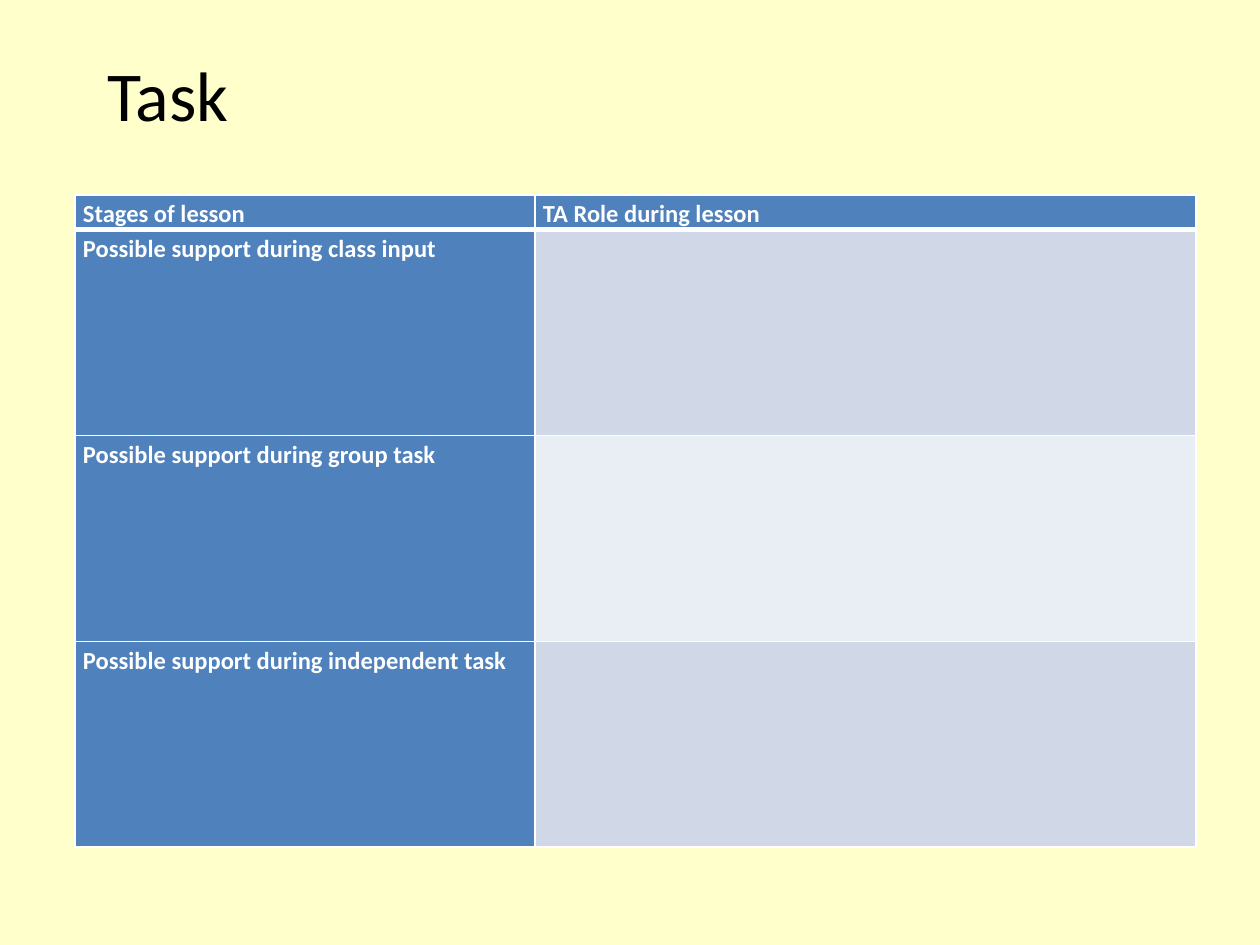
from lxml.etree import SubElement
from pptx import Presentation
from pptx.dml.color import RGBColor
from pptx.oxml.ns import qn
from pptx.util import Emu, Pt

EMU_PER_PX = 914400 / 126
COLORS = {
    "background": "FFFFCC",
    "title": "000000",
    "heading": "4F81BD",
    "heading_text": "FFFFFF",
    "border": "FFFFFF",
    "band_dark": "D0D8E8",
    "band_light": "E9EDF4",
}
HEADINGS = ["Stages of lesson", "TA Role during lesson"]
STAGES = [
    "Possible support during class input",
    "Possible support during group task",
    "Possible support during independent task",
]
COLUMN_WIDTHS = [460, 661]
HEADER_HEIGHT, STAGE_HEIGHT = 34, 206
CELL_MARGINS = {"margin_left": 8, "margin_right": 8, "margin_top": 0, "margin_bottom": 0}


def px(length):
    return Emu(round(length * EMU_PER_PX))


def color(name):
    return RGBColor.from_string(COLORS[name])


class SlideBuilder:
    font_name = "Calibri"

    def __init__(self, slide):
        self.slide = slide

    def background(self, name):
        fill = self.slide.background.fill
        fill.solid()
        fill.fore_color.rgb = color(name)

    def styled_run(self, paragraph, text, color_name, **font_format):
        run = paragraph.add_run()
        run.text = text
        run.font.color.rgb = color(color_name)
        for attribute, value in {"name": self.font_name, **font_format}.items():
            setattr(run.font, attribute, value)

    def title(self, text, left, top, width, height):
        frame = self.slide.shapes.add_textbox(px(left), px(top), px(width), px(height)).text_frame
        frame.word_wrap = True
        self.styled_run(frame.paragraphs[0], text, "title", size=Pt(40))

    def table(self, left, top, column_widths, row_heights):
        table = self.slide.shapes.add_table(
            len(row_heights), len(column_widths), px(left), px(top),
            px(sum(column_widths)), px(sum(row_heights))).table
        for column, width in zip(table.columns, column_widths):
            column.width = px(width)
        for row, height in zip(table.rows, row_heights):
            row.height = px(height)
        return table

    def cell(self, cell, fill_name, text="", **border_widths):
        for attribute, value in CELL_MARGINS.items():
            setattr(cell, attribute, px(value))
        cell.fill.solid()
        cell.fill.fore_color.rgb = color(fill_name)
        self.borders(cell, **border_widths)
        if text:
            paragraph = cell.text_frame.paragraphs[0]
            paragraph.line_spacing = 1.15
            self.styled_run(paragraph, text, "heading_text", size=Pt(14), bold=True)

    def borders(self, cell, top=1, bottom=1):
        properties = cell._tc.get_or_add_tcPr()
        widths = {"a:lnL": 1, "a:lnR": 1, "a:lnT": top, "a:lnB": bottom}
        for position, (tag, width) in enumerate(widths.items()):
            line = SubElement(properties, qn(tag), w=str(Pt(width)))
            solid = SubElement(line, qn("a:solidFill"))
            SubElement(solid, qn("a:srgbClr"), val=COLORS["border"])
            properties.insert(position, line)  # lines come before the fill


def main():
    presentation = Presentation()
    presentation.slide_width, presentation.slide_height = px(1260), px(945)
    builder = SlideBuilder(presentation.slides.add_slide(presentation.slide_layouts[6]))
    builder.background("background")

    # Lesson table: header row
    lesson = builder.table(75, 195, COLUMN_WIDTHS, [HEADER_HEIGHT] + [STAGE_HEIGHT] * len(STAGES))
    for column, heading in enumerate(HEADINGS):
        builder.cell(lesson.cell(0, column), "heading", heading, bottom=3)

    # Lesson table: one banded row per stage
    for row, stage in enumerate(STAGES, start=1):
        top = 3 if row == 1 else 1
        band = "band_dark" if row % 2 else "band_light"
        builder.cell(lesson.cell(row, 0), "heading", stage, top=top)
        builder.cell(lesson.cell(row, 1), band, top=top)

    # Title
    builder.title("Task", 95, 45, 566, 97)

    presentation.save("out.pptx")


if __name__ == "__main__":
    main()
